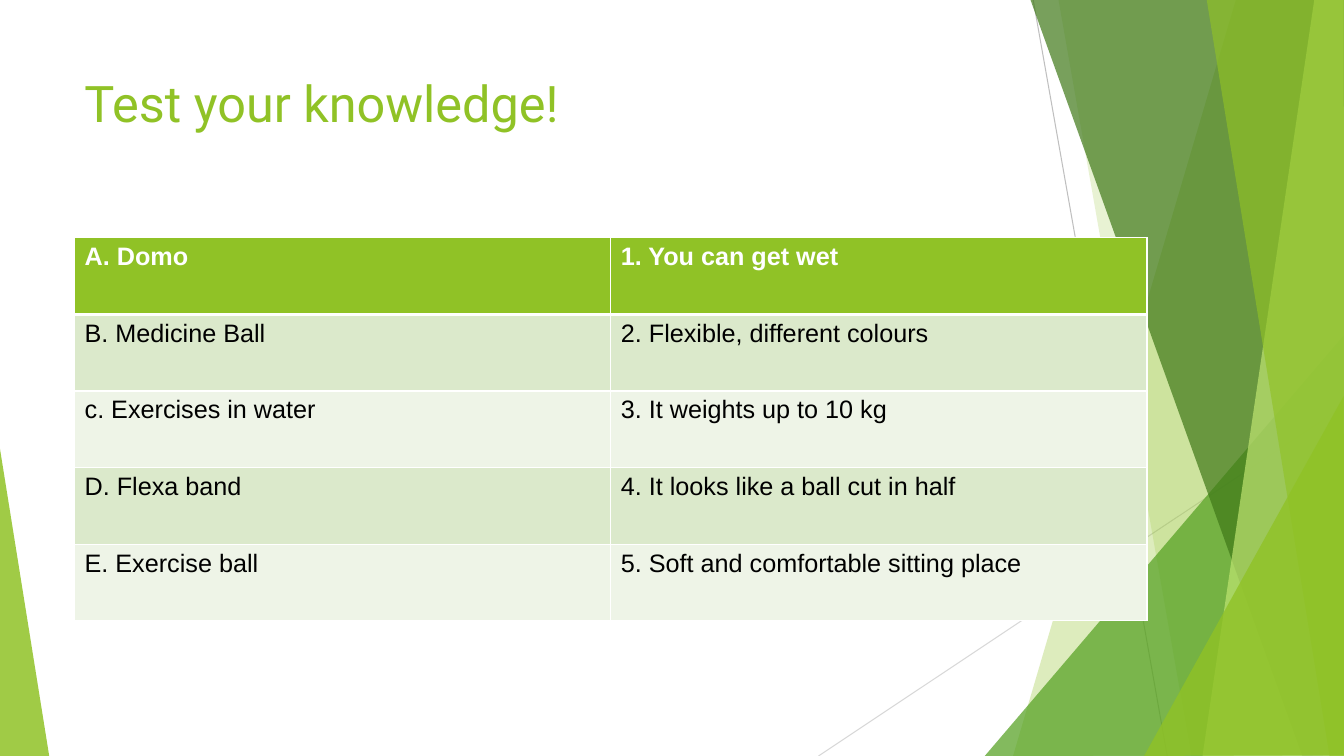
"""Build the "Test your knowledge!" matching slide."""
from lxml.etree import SubElement
from pptx import Presentation
from pptx.dml.color import RGBColor
from pptx.enum.shapes import MSO_CONNECTOR as CONNECTOR
from pptx.enum.text import MSO_ANCHOR as ANCHOR
from pptx.oxml import parse_xml
from pptx.oxml.ns import nsdecls, qn
from pptx.util import Pt

PX = 9144
LIME = "90C226"
WHITE = "FFFFFF"


def rgb(value):
    return RGBColor.from_string(value)


def style(run, font, size, color, bold=False):
    run.font.name = font
    run.font.size = Pt(size)
    run.font.bold = bold
    run.font.color.rgb = rgb(color)


deck = Presentation()
deck.slide_width = 12192000
deck.slide_height = 750 * PX
slide = deck.slides.add_slide(deck.slide_layouts[6])
slide.background.fill.solid()
slide.background.fill.fore_color.rgb = rgb(WHITE)
shapes = slide.shapes

rays = [
    (812, 750, 1333, 403, "D8D8D8"),
    (1025, 0, 1158, 750, "BFBFBF"),
]
for x1, y1, x2, y2, color in rays:
    ray = shapes.add_connector(CONNECTOR.STRAIGHT, x1 * PX, y1 * PX, x2 * PX, y2 * PX)
    ray.line.color.rgb = rgb(color)
    ray.line.width = Pt(0.75)
    SubElement(ray.element.spPr, qn("a:effectLst"))

facets = [
    (LIME, 30, [(1226, 0), (1005, 750), (1333, 749), (1334, -1)]),
    (LIME, 20, [(1050, -1), (1182, 750), (1334, 750), (1333, -1)]),
    ("54A021", 72, [(977, 750), (1333, 333), (1334, 750)]),
    ("3F7818", 70, [(1022, -1), (1292, 750), (1334, 749), (1334, -1)]),
    ("BFE471", 70, [(1304, -1), (1193, 750), (1334, 750), (1333, -1)]),
    (LIME, 65, [(1197, -1), (1319, 750), (1336, 750), (1334, -1)]),
    (LIME, 80, [(1135, 750), (1333, 393), (1334, 749)]),
    (LIME, 85, [(-1, 439), (49, 751), (-1, 750)]),
]
for color, opacity, corners in facets:
    outline = shapes.build_freeform(*corners[0], scale=PX)
    outline.add_line_segments(corners[1:], close=True)
    facet = outline.convert_to_shape()
    facet.shadow.inherit = False
    facet.line.fill.background()
    facet.fill.solid()
    facet.fill.fore_color.rgb = rgb(color)
    tint = facet.element.spPr.find(qn("a:solidFill"))[0]
    SubElement(tint, qn("a:alpha")).set("val", str(opacity * 1000))

title = shapes.add_textbox(74 * PX, 67 * PX, 940 * PX, 144 * PX).text_frame
title.word_wrap = True
title.vertical_anchor = ANCHOR.TOP
title.text = "Test your knowledge!"
style(title.paragraphs[0].runs[0], "Roboto", 36, LIME)

pairs = [
    ("A. Domo", "1. You can get wet"),
    ("B. Medicine Ball", "2. Flexible, different colours"),
    ("c. Exercises in water", "3. It weights up to 10 kg"),
    ("D. Flexa band", "4. It looks like a ball cut in half"),
    ("E. Exercise ball", "5. Soft and comfortable sitting place"),
]
quiz = shapes.add_table(len(pairs), 2, 74 * PX, 236 * PX, 1064 * PX, 380 * PX).table
quiz.first_row = False
quiz.horz_banding = False
for column in quiz.columns:
    column.width = 532 * PX
for index, pair in enumerate(pairs):
    quiz.rows[index].height = 76 * PX
    header = index == 0
    band = LIME if header else ("EEF4E7", "DBE9CB")[index % 2]
    widths = {"L": 1, "R": 1, "T": 3 if index == 1 else 1, "B": 3 if header else 1}
    for cell, wording in zip(quiz.rows[index].cells, pair):
        cell.text = wording
        style(cell.text_frame.paragraphs[0].runs[0], "Arial", 18,
              WHITE if header else "000000", header)
        cell.fill.solid()
        cell.fill.fore_color.rgb = rgb(band)
        properties = cell._tc.get_or_add_tcPr()
        for place, (side, width) in enumerate(widths.items()):
            properties.insert(place, parse_xml(
                f'<a:ln{side} {nsdecls("a")} w="{Pt(width)}"><a:solidFill>'
                f'<a:srgbClr val="{WHITE}"/></a:solidFill></a:ln{side}>'))

deck.save("out.pptx")
